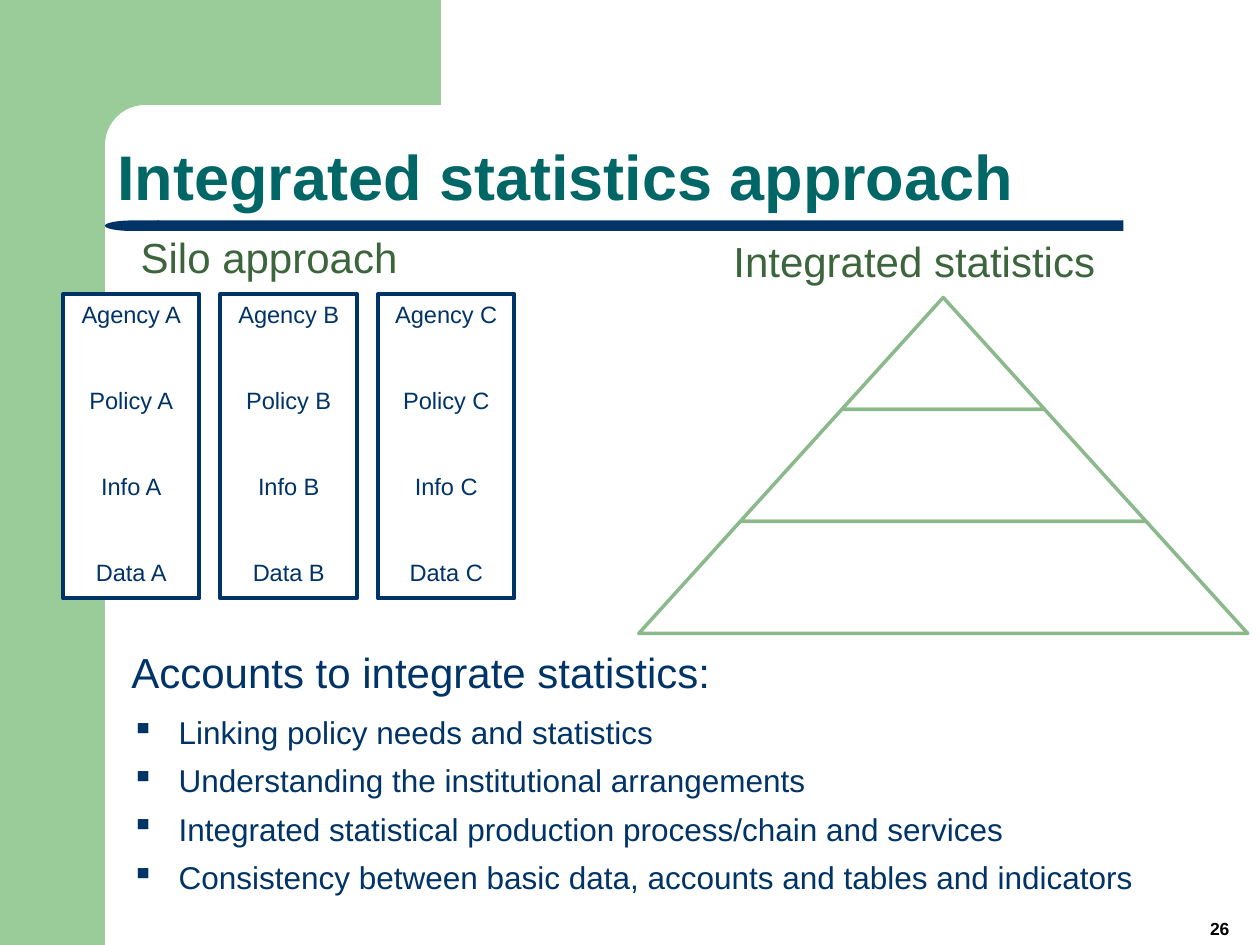
from dataclasses import dataclass
from math import cos, pi, sin

from lxml.etree import SubElement
from pptx import Presentation
from pptx.dml.color import RGBColor
from pptx.enum.shapes import MSO_SHAPE as Preset
from pptx.enum.text import MSO_ANCHOR as Anchor, PP_ALIGN as Align
from pptx.oxml.ns import qn
from pptx.util import Pt


@dataclass(frozen=True)
class Theme:
    font: str = "Arial"
    band: str = "99CC99"
    navy: str = "003366"
    teal: str = "006666"
    heading: str = "3C653C"
    tier: str = "8BB98B"
    white: str = "FFFFFF"
    black: str = "000000"
    title_size: float = 36
    heading_size: float = 24
    bullet_size: float = 18
    silo_size: float = 13.5
    number_size: float = 10


THEME = Theme()
BULLETS = [
    "Linking policy needs and statistics",
    "Understanding the institutional arrangements",
    "Integrated statistical production process/chain and services",
    "Consistency between basic data, accounts and tables and indicators",
]


def apply_format(target, values):
    for name, value in values.items():
        setattr(target, name, value)


def style_shape(shape, fill, line=None, width=0):
    shape.shadow.inherit = False
    shape.fill.solid()
    shape.fill.fore_color.rgb = RGBColor.from_string(fill)
    if line:
        shape.line.color.rgb = RGBColor.from_string(line)
        shape.line.width = Pt(width)
    else:
        shape.line.fill.background()
    return shape


def add_preset(slide, preset, box, fill, line=None, width=0, adjust=None):
    shape = slide.shapes.add_shape(preset, *map(Pt, box))
    if adjust is not None:
        shape.adjustments[0] = adjust
    return style_shape(shape, fill, line, width)


def write_lines(frame, lines, size, color, bold=False, **layout):
    """Fill the next paragraphs of a frame, starting with an unused first one."""
    written = []
    for text in lines:
        unused = not frame.paragraphs[0].runs
        paragraph = frame.paragraphs[0] if unused else frame.add_paragraph()
        apply_format(paragraph, layout)
        run = paragraph.add_run()
        run.text = text
        apply_format(run.font, {"name": THEME.font, "size": Pt(size), "bold": bold})
        run.font.color.rgb = RGBColor.from_string(color)
        written.append(paragraph)
    return written


def add_text_box(slide, box, anchor=Anchor.TOP):
    frame = slide.shapes.add_textbox(*map(Pt, box)).text_frame
    apply_format(frame, {"word_wrap": True, "vertical_anchor": anchor})
    return frame


def set_indent(paragraph, left, first=0, bullet=None):
    properties = paragraph._p.get_or_add_pPr()
    properties.set("marL", str(Pt(left)))
    properties.set("indent", str(Pt(first)))
    if bullet:
        SubElement(properties, qn("a:buChar")).set("char", bullet)


def add_frame_band(slide):
    # Side band and top band, joined by a rounded inner corner
    inner, radius, right, bottom = 60, 23, 252, 540
    center = inner + radius
    corner = [
        (center - radius * sin(step * pi / 24), center - radius * cos(step * pi / 24))
        for step in range(13)
    ]
    outline = [(right, 0), (right, inner), *corner, (inner, bottom), (0, bottom)]
    builder = slide.shapes.build_freeform(0, 0)
    builder.add_line_segments([(Pt(x), Pt(y)) for x, y in outline])
    style_shape(builder.convert_to_shape(), THEME.band)


def add_title(slide):
    # Underline with a rounded left end
    add_preset(slide, Preset.RECTANGLE, (90, 126, 552, 6), THEME.navy)
    cap = add_preset(slide, Preset.FLOWCHART_DELAY, (60, 126, 31, 6), THEME.navy)
    cap._element.spPr.get_or_add_xfrm().set("flipH", "1")
    frame = add_text_box(slide, (60, 36, 624, 90), Anchor.BOTTOM)
    write_lines(frame, ["Integrated statistics approach"], THEME.title_size,
                THEME.teal, bold=True, line_spacing=0.9)


def add_headings(slide):
    frame = add_text_box(slide, (60, 129, 260, 40))
    heading = write_lines(frame, ["Silo approach"], THEME.heading_size,
                          THEME.heading, space_before=Pt(4.8))[0]
    set_indent(heading, 13.3)
    frame = add_text_box(slide, (412, 110, 239, 78), Anchor.MIDDLE)
    write_lines(frame, ["Integrated statistics"], THEME.heading_size, THEME.heading)


def add_silos(slide):
    for index, letter in enumerate("ABC"):
        silo = add_preset(slide, Preset.RECTANGLE, (36 + 90 * index, 168, 78, 174),
                          THEME.white, THEME.navy, 2.25)
        frame = silo.text_frame
        apply_format(frame, {"word_wrap": True, "vertical_anchor": Anchor.TOP})
        style = {"size": THEME.silo_size, "color": THEME.navy, "alignment": Align.CENTER}
        write_lines(frame, [f"Agency {letter}"], **style)
        levels = [f"{level} {letter}" for level in ("Policy", "Info", "Data")]
        write_lines(frame, levels, space_before=Pt(33), **style)


def add_pyramid(slide):
    center, top, height, step = 539, 170, 64, 116
    for tier in range(3):
        width = step * (tier + 1)
        add_preset(slide, Preset.TRAPEZOID,
                   (center - width / 2, top + height * tier, width, height),
                   THEME.white, THEME.tier, 2, adjust=step / 2 / height)


def add_summary(slide):
    frame = add_text_box(slide, (68, 366, 648, 157))
    write_lines(frame, ["Accounts to integrate statistics:"], THEME.heading_size,
                THEME.navy, space_before=Pt(6), space_after=Pt(6))
    for paragraph in write_lines(frame, BULLETS, THEME.bullet_size, THEME.navy,
                                 space_before=Pt(3), space_after=Pt(3)):
        set_indent(paragraph, 27, -27, "▪")


def add_page_number(slide):
    frame = add_text_box(slide, (674, 516, 46, 24), Anchor.BOTTOM)
    write_lines(frame, ["26"], THEME.number_size, THEME.black, bold=True,
                alignment=Align.CENTER)


def main():
    presentation = Presentation()
    apply_format(presentation, {"slide_width": Pt(720), "slide_height": Pt(540)})
    slide = presentation.slides.add_slide(presentation.slide_layouts[6])
    for add_part in (add_frame_band, add_title, add_headings, add_silos,
                     add_pyramid, add_summary, add_page_number):
        add_part(slide)
    presentation.save("out.pptx")


if __name__ == "__main__":
    main()
